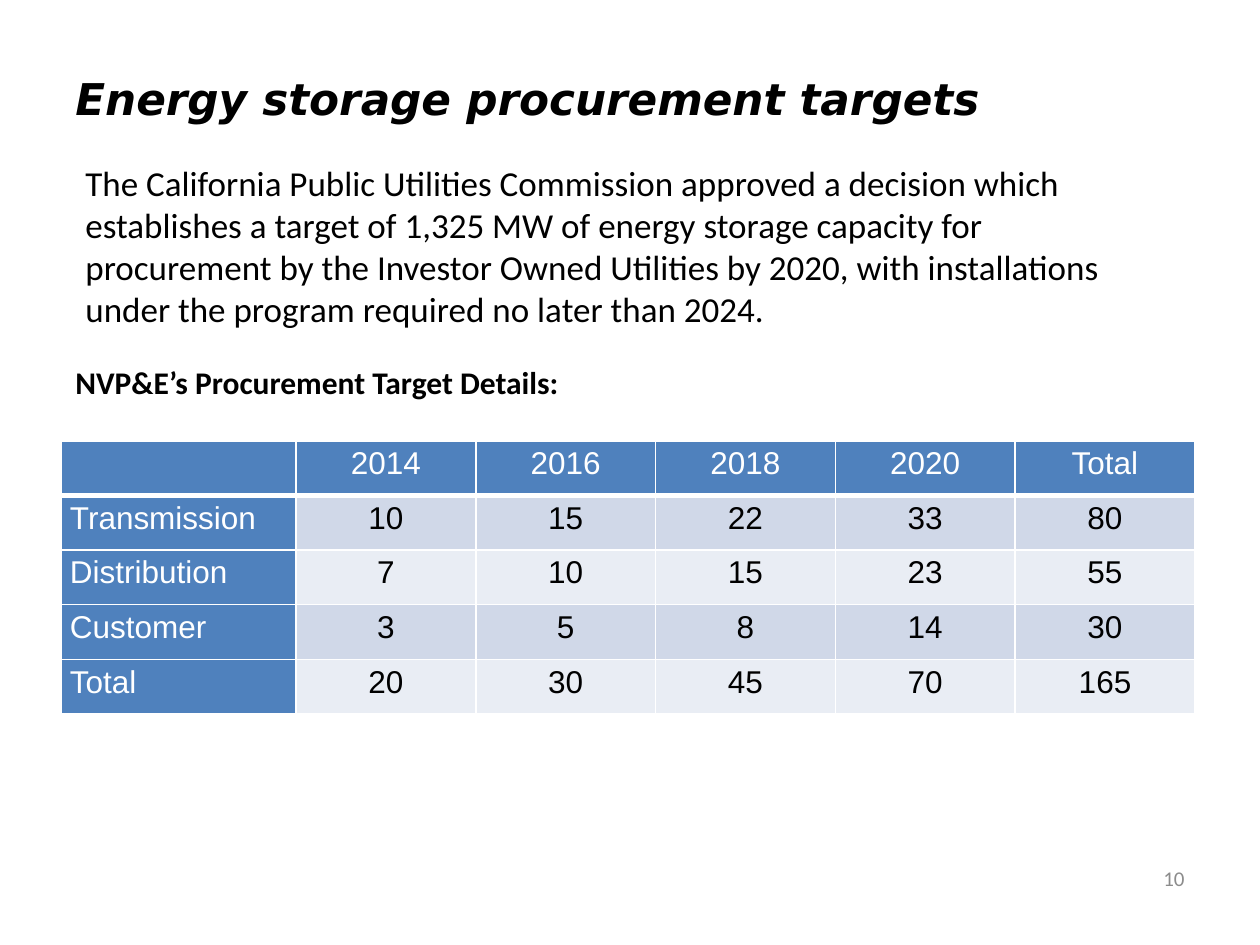
"""Builds the slide on energy storage procurement targets."""
from dataclasses import dataclass

from lxml.etree import SubElement
from pptx import Presentation
from pptx.dml.color import RGBColor
from pptx.enum.text import MSO_ANCHOR, PP_ALIGN
from pptx.oxml.ns import qn
from pptx.util import Emu, Pt


@dataclass(frozen=True)
class Theme:
    ink: str = "000000"
    muted: str = "8C8C8C"
    white: str = "FFFFFF"
    header: str = "4F81BD"
    bands: tuple = ("D0D8E8", "E9EDF4")
    body_font: str = "Calibri"
    title_font: str = "DejaVu Sans"
    table_font: str = "Arial"
    title_size: int = 25
    body_size: int = 20
    table_size: int = 18
    number_size: int = 12
    rule: int = 1
    header_rule: int = 3


THEME = Theme()
PX_PER_INCH = 126
SLIDE_SIZE = (1260, 945)

PASSAGES = [
    dict(text="Energy storage procurement targets", box=(63, 42, 1134, 113),
         anchor=MSO_ANCHOR.MIDDLE, align=PP_ALIGN.LEFT, color=THEME.ink,
         font=dict(name=THEME.title_font, size=Pt(THEME.title_size), bold=True, italic=True)),
    dict(text="The California Public Utilities Commission approved a decision which "
              "establishes a target of 1,325 MW of energy storage capacity for procurement "
              "by the Investor Owned Utilities by 2020, with installations under the program "
              "required no later than 2024.",
         box=(73, 155, 1071, 183),
         anchor=MSO_ANCHOR.TOP, align=PP_ALIGN.LEFT, color=THEME.ink,
         font=dict(name=THEME.body_font, size=Pt(THEME.body_size))),
    dict(text="NVP&E’s Procurement Target Details:", box=(63, 357, 1124, 50),
         anchor=MSO_ANCHOR.TOP, align=PP_ALIGN.LEFT, color=THEME.ink,
         font=dict(name=THEME.body_font, size=Pt(THEME.table_size), bold=True)),
    dict(text="10", box=(903, 853, 294, 50),
         anchor=MSO_ANCHOR.MIDDLE, align=PP_ALIGN.RIGHT, color=THEME.muted,
         font=dict(name=THEME.body_font, size=Pt(THEME.number_size))),
]

TARGETS = [
    ("", "2014", "2016", "2018", "2020", "Total"),
    ("Transmission", "10", "15", "22", "33", "80"),
    ("Distribution", "7", "10", "15", "23", "55"),
    ("Customer", "3", "5", "8", "14", "30"),
    ("Total", "20", "30", "45", "70", "165"),
]
TARGETS_BOX = (61, 441, 1134, 273)
LABEL_WIDTH = 235
CELL_INSET = 9


def px(length):
    return Emu(round(length * 914400 / PX_PER_INCH))


def apply(target, values):
    for key, value in values.items():
        setattr(target, key, value)


def write(frame, text, align, color, font, spacing=None):
    paragraph = frame.paragraphs[0]
    apply(paragraph, dict(alignment=align, line_spacing=spacing))
    run = paragraph.add_run()
    run.text = text
    apply(run.font, font)
    run.font.color.rgb = RGBColor.from_string(color)


def add_passage(slide, text, box, anchor, align, color, font):
    frame = slide.shapes.add_textbox(*map(px, box)).text_frame
    apply(frame, dict(word_wrap=True, vertical_anchor=anchor))
    write(frame, text, align, color, font)


def add_borders(cell, bottom):
    properties = cell._tc.get_or_add_tcPr()
    widths = dict(lnL=THEME.rule, lnR=THEME.rule, lnT=THEME.rule, lnB=bottom)
    for side, width in widths.items():
        line = SubElement(properties, qn(f"a:{side}"), w=str(Pt(width)))
        fill = SubElement(line, qn("a:solidFill"))
        SubElement(fill, qn("a:srgbClr"), val=THEME.white)


def add_targets(slide):
    row_count, column_count = len(TARGETS), len(TARGETS[0])
    frame = slide.shapes.add_table(row_count, column_count, *map(px, TARGETS_BOX))
    table = frame.table
    for row in table.rows:
        row.height = px(TARGETS_BOX[3] / row_count)
    year_width = (TARGETS_BOX[2] - LABEL_WIDTH) / (column_count - 1)
    for index, column in enumerate(table.columns):
        column.width = px(year_width if index else LABEL_WIDTH)

    font = dict(name=THEME.table_font, size=Pt(THEME.table_size))
    for r, values in enumerate(TARGETS):
        for c, value in enumerate(values):
            cell = table.cell(r, c)
            heading = r == 0 or c == 0
            apply(cell, dict(margin_left=px(CELL_INSET), margin_right=px(CELL_INSET),
                             margin_top=0, margin_bottom=0))
            add_borders(cell, THEME.rule if r else THEME.header_rule)
            cell.fill.solid()
            cell.fill.fore_color.rgb = RGBColor.from_string(
                THEME.header if heading else THEME.bands[(r - 1) % 2])
            write(cell.text_frame, value, PP_ALIGN.CENTER if c else PP_ALIGN.LEFT,
                  THEME.white if heading else THEME.ink, font, spacing=1.15)


def main():
    deck = Presentation()
    deck.slide_width, deck.slide_height = map(px, SLIDE_SIZE)
    slide = deck.slides.add_slide(deck.slide_layouts[6])
    for passage in PASSAGES:
        add_passage(slide, **passage)
    add_targets(slide)
    deck.save("out.pptx")


if __name__ == "__main__":
    main()
